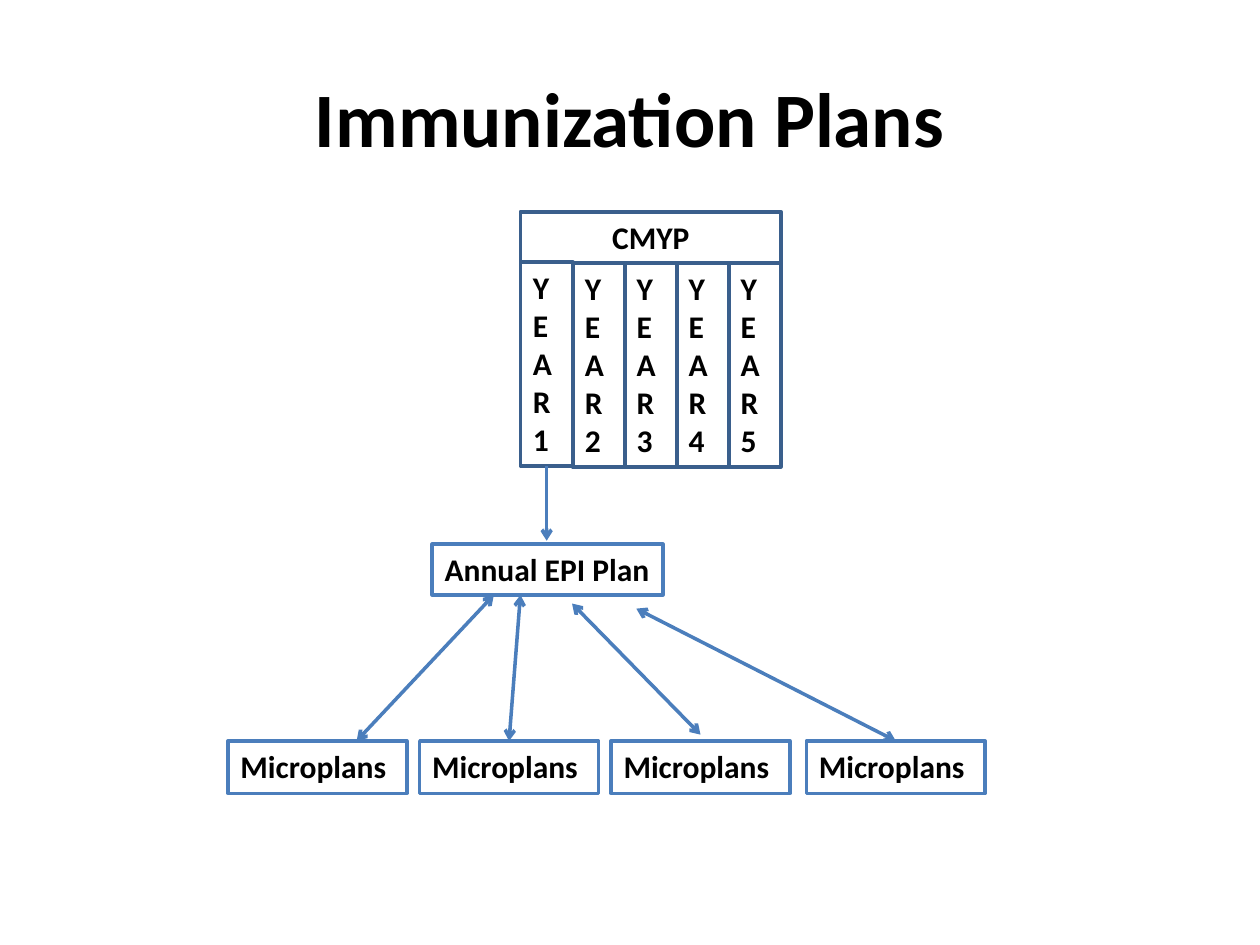
from pptx import Presentation
from pptx.util import Pt
from pptx.dml.color import RGBColor
from pptx.enum.shapes import MSO_SHAPE, MSO_CONNECTOR
from pptx.enum.text import PP_ALIGN, MSO_ANCHOR, MSO_AUTO_SIZE
from pptx.oxml.ns import qn
from lxml.etree import SubElement

NAVY, BLUE, BLACK = "3A5F8C", "4B7EBC", "000000"


def tint(hue):
    return RGBColor.from_string(hue)


def write(shape, text, size, frame, align=PP_ALIGN.LEFT):
    body = shape.text_frame
    for key, val in frame.items():
        setattr(body, key, val)
    para = body.paragraphs[0]
    para.alignment = align
    run = para.add_run()
    run.text = text
    for key, val in {"name": "Calibri", "size": Pt(size), "bold": True}.items():
        setattr(run.font, key, val)
    run.font.color.rgb = tint(BLACK)


deck = Presentation()
deck.slide_width, deck.slide_height = Pt(720), Pt(540)
slide = deck.slides.add_slide(deck.slide_layouts[6])
shapes = slide.shapes

title = shapes.add_textbox(Pt(36), Pt(21.6), Pt(648), Pt(90))
write(title, "Immunization Plans", 44,
      {"word_wrap": True, "vertical_anchor": MSO_ANCHOR.MIDDLE}, PP_ALIGN.CENTER)

left, step = 297.4, 29.7
plans = [("CMYP", left, 121, 149, 29, NAVY)]
for num in range(5):
    top = 150.4 if num else 149.8
    plans.append((f"YEAR {num + 1}", left + num * step, top, 30, 116.4, NAVY))
plans.append(("Annual EPI Plan", 247, 311, 131.8, 29, BLUE))
for x in (130.3, 239.8, 349.2, 460.8):
    plans.append(("Microplans", x, 423.4, 102.2, 30, BLUE))

boxes = []
for text, x, y, wide, high, hue in plans:
    box = shapes.add_shape(MSO_SHAPE.RECTANGLE, Pt(x), Pt(y), Pt(wide), Pt(high))
    box.shadow.inherit = False
    box.fill.background()
    box.line.color.rgb = tint(hue)
    box.line.width = Pt(2)
    frame = {"word_wrap": text != "Annual EPI Plan",
             "vertical_anchor": MSO_ANCHOR.TOP,
             "auto_size": MSO_AUTO_SIZE.SHAPE_TO_FIT_TEXT}
    write(box, text, 18, frame, PP_ALIGN.CENTER if text == "CMYP" else PP_ALIGN.LEFT)
    boxes.append(box)

both = ("headEnd", "tailEnd")
links = [
    (312.4, 266.2, 312.4, 309, ("tailEnd",), (boxes[1], 2)),
    (203.8, 423.4, 282.2, 340, both, None),
    (290.9, 423.4, 297.4, 340, both, (boxes[8], 0)),
    (400.3, 419.8, 326.9, 344.9, both, None),
    (511.9, 423.4, 363.6, 347.8, both, (boxes[10], 0)),
]
for x1, y1, x2, y2, ends, joint in links:
    link = shapes.add_connector(MSO_CONNECTOR.STRAIGHT, Pt(x1), Pt(y1), Pt(x2), Pt(y2))
    link.line.color.rgb = tint(BLUE)
    link.line.width = Pt(2)
    for end in ends:
        SubElement(link.line._get_or_add_ln(), qn(f"a:{end}"), type="arrow")
    SubElement(link._element.spPr, qn("a:effectLst"))
    if joint:
        link.begin_connect(*joint)

deck.save("out.pptx")
